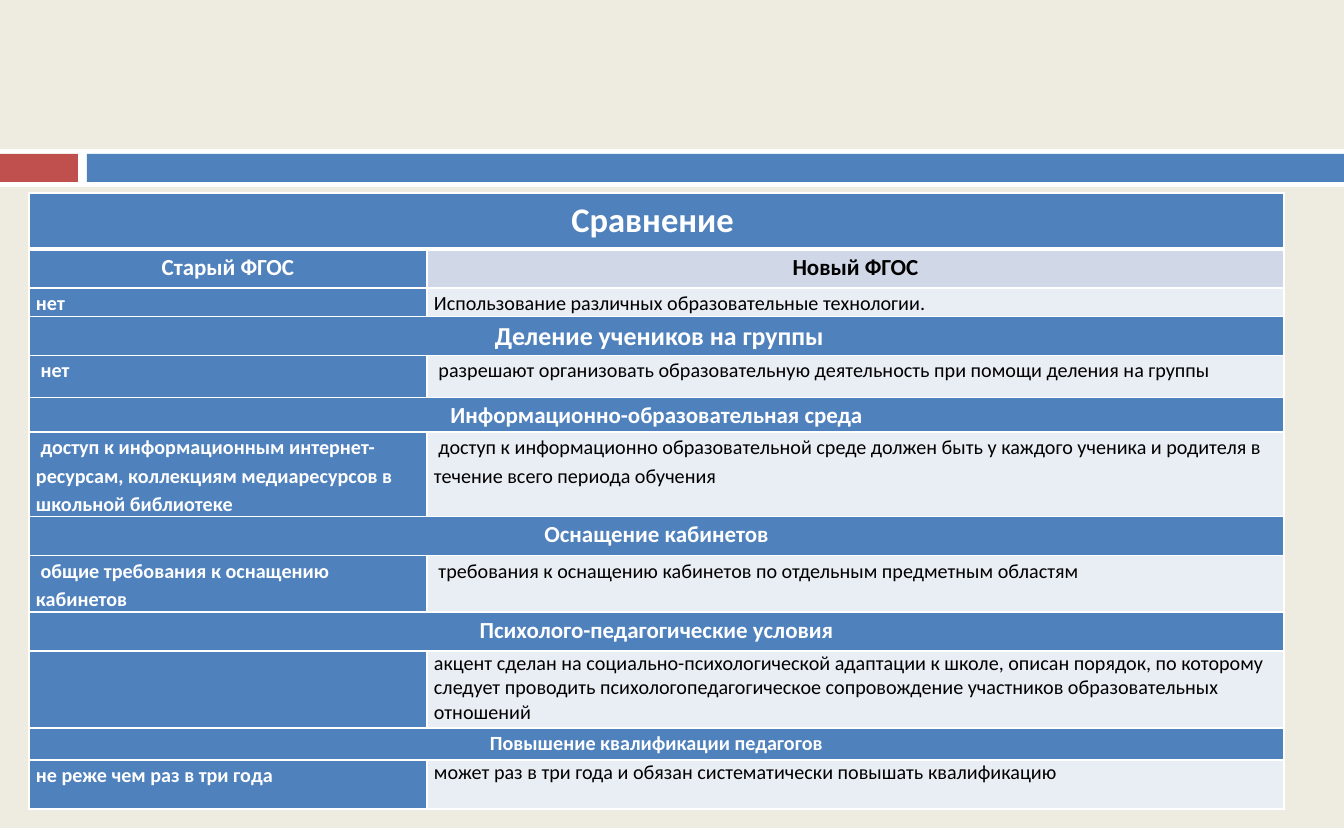
from pptx import Presentation
from pptx.dml.color import RGBColor
from pptx.enum.shapes import MSO_SHAPE
from pptx.enum.text import PP_ALIGN
from pptx.oxml import parse_xml
from pptx.oxml.ns import nsdecls
from pptx.util import Pt

PX = 914400 / 103.5
WHITE = RGBColor(0xFF, 0xFF, 0xFF)
BLACK = RGBColor(0, 0, 0)
BEIGE = RGBColor(0xEE, 0xEC, 0xE1)
RED = RGBColor(0xC0, 0x50, 0x4D)
BLUE = RGBColor(0x4F, 0x81, 0xBD)
LIGHT = RGBColor(0xD0, 0xD8, 0xE8)
PALE = RGBColor(0xE9, 0xED, 0xF4)

BARS = [
    (0, 149, 1344, 38, WHITE),
    (0, 154, 78, 28, RED),
    (87, 154, 1257, 28, BLUE),
]
TABLE_LEFT, TABLE_TOP = 29, 193
COLUMNS = [398, 857]
# (kind, height, font size, texts, line spacing of the right cell)
ROWS = [
    ("section", 56, 24, ["Сравнение "], 1.15),
    ("header", 39, 16, ["Старый ФГОС", "Новый ФГОС"], 1.15),
    ("body", 28, 14, ["нет", "Использование различных образовательные технологии."], 1.15),
    ("section", 39, 18, [" Деление учеников на группы"], 1.15),
    ("body", 42, 14, [
        " нет",
        " разрешают организовать образовательную деятельность при помощи деления на группы"], 1.15),
    ("section", 35, 16, [" Информационно-образовательная среда "], 1.15),
    ("body", 84, 14, [
        " доступ к информационным интернет-ресурсам, коллекциям медиаресурсов в школьной библиотеке",
        " доступ к информационно образовательной среде должен быть у каждого ученика и родителя "
        "в течение всего периода обучения"], 1.15),
    ("section", 39, 16, ["Оснащение кабинетов"], 1.15),
    ("body", 56, 14, [
        " общие требования к оснащению\nкабинетов",
        " требования к оснащению кабинетов по отдельным предметным областям"], 1.15),
    ("section", 39, 16, ["Психолого-педагогические условия"], 1.15),
    ("body", 77, 14, [
        "",
        "акцент сделан на социально-психологической адаптации к школе, описан порядок, по которому "
        "следует проводить психологопедагогическое сопровождение участников образовательных "
        "отношений"], 1),
    ("section", 32, 14, ["Повышение квалификации педагогов"], 1.15),
    ("body", 49, 14, [
        "не реже чем раз в три года",
        "может раз в три года и обязан систематически повышать квалификацию"], 1),
]


def px(n):
    return round(n * PX)


def add_bar(slide, left, top, width, height, color):
    s = slide.shapes.add_shape(MSO_SHAPE.RECTANGLE, px(left), px(top), px(width), px(height))
    s.shadow.inherit = False
    s.fill.solid()
    s.fill.fore_color.rgb = color
    s.line.fill.background()


def set_borders(cell, top, bottom):
    tc_pr = cell._tc.get_or_add_tcPr()
    sides = [("L", 1), ("R", 1), ("T", top), ("B", bottom)]
    for i, (side, width) in enumerate(sides):
        tc_pr.insert(i, parse_xml(
            f'<a:ln{side} {nsdecls("a")} w="{Pt(width)}"><a:solidFill>'
            f'<a:srgbClr val="{WHITE}"/></a:solidFill></a:ln{side}>'))


def fill_cell(cell, text, size, fill, color, bold, align, spacing):
    cell.fill.solid()
    cell.fill.fore_color.rgb = fill
    cell.margin_left = cell.margin_right = px(7)
    cell.margin_top = cell.margin_bottom = 0
    tf = cell.text_frame
    tf.text = text
    for p in tf.paragraphs:
        p.alignment = align
        p.line_spacing = spacing
        p.font.size = Pt(size)
        for r in p.runs:
            r.font.name = "Calibri"
            r.font.size = Pt(size)
            r.font.bold = bold
            r.font.color.rgb = color


def add_comparison(slide):
    height = sum(row[1] for row in ROWS)
    table = slide.shapes.add_table(
        len(ROWS), len(COLUMNS), px(TABLE_LEFT), px(TABLE_TOP),
        px(sum(COLUMNS)), px(height)).table
    for column, width in zip(table.columns, COLUMNS):
        column.width = px(width)
    for i, (kind, height, size, texts, spacing) in enumerate(ROWS):
        table.rows[i].height = px(height)
        align = PP_ALIGN.LEFT if kind == "body" else PP_ALIGN.CENTER
        if kind == "section":
            table.cell(i, 0).merge(table.cell(i, 1))
        for j, text in enumerate(texts):
            cell = table.cell(i, j)
            if j == 0:
                fill_cell(cell, text, size, BLUE, WHITE, True, align, 1.15)
            else:
                header = kind == "header"
                fill = LIGHT if header else PALE
                fill_cell(cell, text, size, fill, BLACK, header, align, spacing)
        for j in range(len(COLUMNS)):
            set_borders(table.cell(i, j), 3 if i == 1 else 1, 3 if i == 0 else 1)


def main():
    """Build the slide that compares the old and new standards."""
    prs = Presentation()
    prs.slide_width, prs.slide_height = px(1344), px(828)
    slide = prs.slides.add_slide(prs.slide_layouts[6])
    slide.background.fill.solid()
    slide.background.fill.fore_color.rgb = BEIGE
    for bar in BARS:
        add_bar(slide, *bar)
    add_comparison(slide)
    prs.save("out.pptx")


if __name__ == "__main__":
    main()
